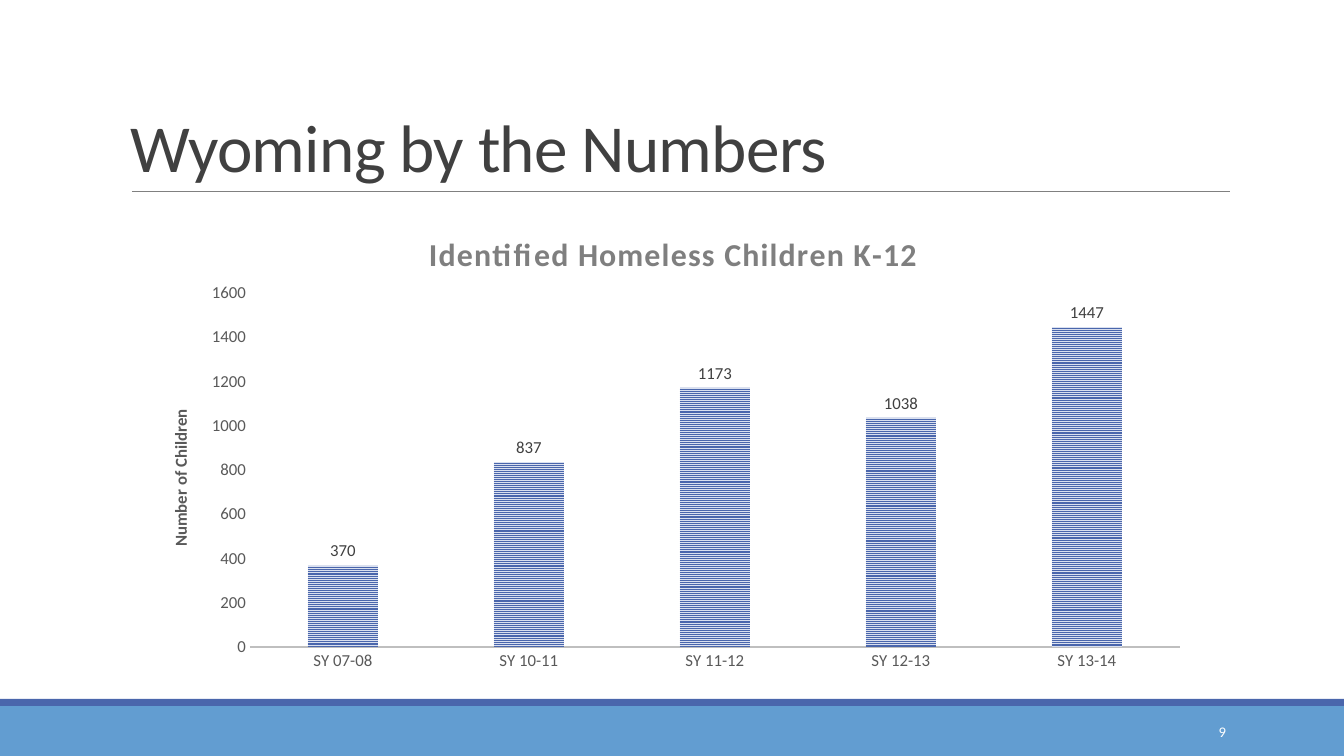
import pptx
import pptx.chart.data
import pptx.dml.color
import pptx.enum.chart
import pptx.enum.dml
import pptx.enum.shapes
import pptx.enum.text
import pptx.oxml.ns
import pptx.oxml.xmlchemy
import pptx.util

SLIDE_WIDTH, SLIDE_HEIGHT = 1344, 756
EMU_PER_PX = 12192000 / SLIDE_WIDTH
CHART_BOX = (143, 202, 1058, 479)

THEME = {
    "font": "Calibri",
    "color": {
        name: pptx.dml.color.RGBColor.from_string(value)
        for name, value in {
            "band": "629DD1", "accent": "4A66AC", "stripe": "DAE0EF",
            "rule": "808080", "heading": "404040", "chart_title": "7F7F7F",
            "axis_text": "595959", "axis_line": "BFBFBF", "white": "FFFFFF",
        }.items()
    },
    "size": {"heading": 48, "chart_title": 22.8, "chart": 12, "number": 10.5},
}


def px(*lengths):
    return [pptx.util.Emu(round(length * EMU_PER_PX)) for length in lengths]


def style(font, size, color, bold=False):
    font.name = THEME["font"]
    font.size = pptx.util.Pt(THEME["size"][size])
    font.color.rgb = THEME["color"][color]
    font.bold = bold


presentation = pptx.Presentation()
presentation.slide_width, presentation.slide_height = px(SLIDE_WIDTH, SLIDE_HEIGHT)
slide = presentation.slides.add_slide(presentation.slide_layouts[6])

# Footer bands
for top, height, color in ((706, 50, "band"), (699, 7, "accent")):
    band = slide.shapes.add_shape(
        pptx.enum.shapes.MSO_SHAPE.RECTANGLE, *px(0, top, SLIDE_WIDTH, height))
    band.shadow.inherit = False
    band.fill.solid()
    band.fill.fore_color.rgb = THEME["color"][color]
    band.line.fill.background()

# Rule under the heading
rule = slide.shapes.add_connector(
    pptx.enum.shapes.MSO_CONNECTOR.STRAIGHT, *px(132, 191, 1230, 191))
rule.line.color.rgb = THEME["color"]["rule"]
rule.line.width = pptx.util.Pt(0.5)
rule._element.spPr.append(pptx.oxml.xmlchemy.OxmlElement("a:effectLst"))

# Heading and slide number
anchors, alignments = pptx.enum.text.MSO_ANCHOR, pptx.enum.text.PP_ALIGN
for text, box, size, color, anchor, alignment, spacing in (
    ("Wyoming by the Numbers", (121, 31, 1109, 160), "heading", "heading",
     anchors.BOTTOM, alignments.LEFT, 0.85),
    ("9", (1092, 712, 144, 40), "number", "white",
     anchors.MIDDLE, alignments.RIGHT, 1.0),
):
    frame = slide.shapes.add_textbox(*px(*box)).text_frame
    frame.word_wrap = True
    frame.vertical_anchor = anchor
    paragraph = frame.paragraphs[0]
    paragraph.text = text
    paragraph.alignment = alignment
    paragraph.line_spacing = spacing
    style(paragraph.font, size, color)
    if size == "heading":
        paragraph.runs[0].font._element.set("spc", "-50")

# Column chart
chart_data = pptx.chart.data.CategoryChartData()
chart_data.categories = ["SY 07-08", "SY 10-11", "SY 11-12", "SY 12-13", "SY 13-14"]
chart_data.add_series("Series 1", (370, 837, 1173, 1038, 1447))
chart = slide.shapes.add_chart(
    pptx.enum.chart.XL_CHART_TYPE.COLUMN_CLUSTERED, *px(*CHART_BOX), chart_data).chart
chart.has_legend = False
style(chart.font, "chart", "axis_text")

# Columns and their values
plot = chart.plots[0]
plot.vary_by_categories = False
plot.gap_width = 164
plot.overlap = -22
fill = plot.series[0].format.fill
fill.patterned()
fill.pattern = pptx.enum.dml.MSO_PATTERN.NARROW_HORIZONTAL
fill.fore_color.rgb = THEME["color"]["accent"]
fill.back_color.rgb = THEME["color"]["stripe"]
plot.has_data_labels = True
labels = plot.data_labels
labels.show_value = True
labels.position = pptx.enum.chart.XL_LABEL_POSITION.OUTSIDE_END
style(labels.font, "chart", "heading")

# Axes
for axis in (chart.category_axis, chart.value_axis):
    axis.has_major_gridlines = False
    axis.major_tick_mark = pptx.enum.chart.XL_TICK_MARK.NONE
    style(axis.tick_labels.font, "chart", "axis_text")
chart.category_axis.format.line.color.rgb = THEME["color"]["axis_line"]
chart.category_axis.format.line.width = pptx.util.Pt(1.5)
chart.value_axis.format.line.fill.background()
chart.value_axis.minimum_scale = 0
chart.value_axis.maximum_scale = 1600
chart.value_axis.major_unit = 200

# Chart and axis titles
for title, text, size, color in (
    (chart.chart_title, "Identified Homeless Children K-12", "chart_title", "chart_title"),
    (chart.value_axis.axis_title, "Number of Children", "chart", "axis_text"),
):
    paragraph = title.text_frame.paragraphs[0]
    paragraph.text = text
    style(paragraph.font, size, color, bold=True)
chart.chart_title.text_frame.paragraphs[0].font._element.set("spc", "100")
axis_title_body = chart.value_axis.axis_title.text_frame._txBody.bodyPr
axis_title_body.set("rot", "-5400000")
axis_title_body.set("vert", "horz")

# Places inside the chart, as shares of its box
chart_left, chart_top, chart_width, chart_height = CHART_BOX
plot_area = chart._chartSpace.chart.plotArea
for element, index, left, top, extent in (
    (plot_area, 0, 250, 293, (930, 354)),
    (chart.chart_title._element, 1, 423, 226, None),
    (chart.value_axis.axis_title._element, 1, 166, 406, None),
):
    for old_layout in element.findall(pptx.oxml.ns.qn("c:layout")):
        element.remove(old_layout)
    settings = [("xMode", "edge"), ("yMode", "edge"),
                ("x", round((left - chart_left) / chart_width, 4)),
                ("y", round((top - chart_top) / chart_height, 4))]
    if extent:
        settings.insert(0, ("layoutTarget", "inner"))
        settings += [("w", round(extent[0] / chart_width, 4)),
                     ("h", round(extent[1] / chart_height, 4))]
    layout = pptx.oxml.xmlchemy.OxmlElement("c:layout")
    manual = pptx.oxml.xmlchemy.OxmlElement("c:manualLayout")
    layout.append(manual)
    for name, value in settings:
        setting = pptx.oxml.xmlchemy.OxmlElement("c:" + name)
        setting.set("val", str(value))
        manual.append(setting)
    element.insert(index, layout)

presentation.save("out.pptx")
